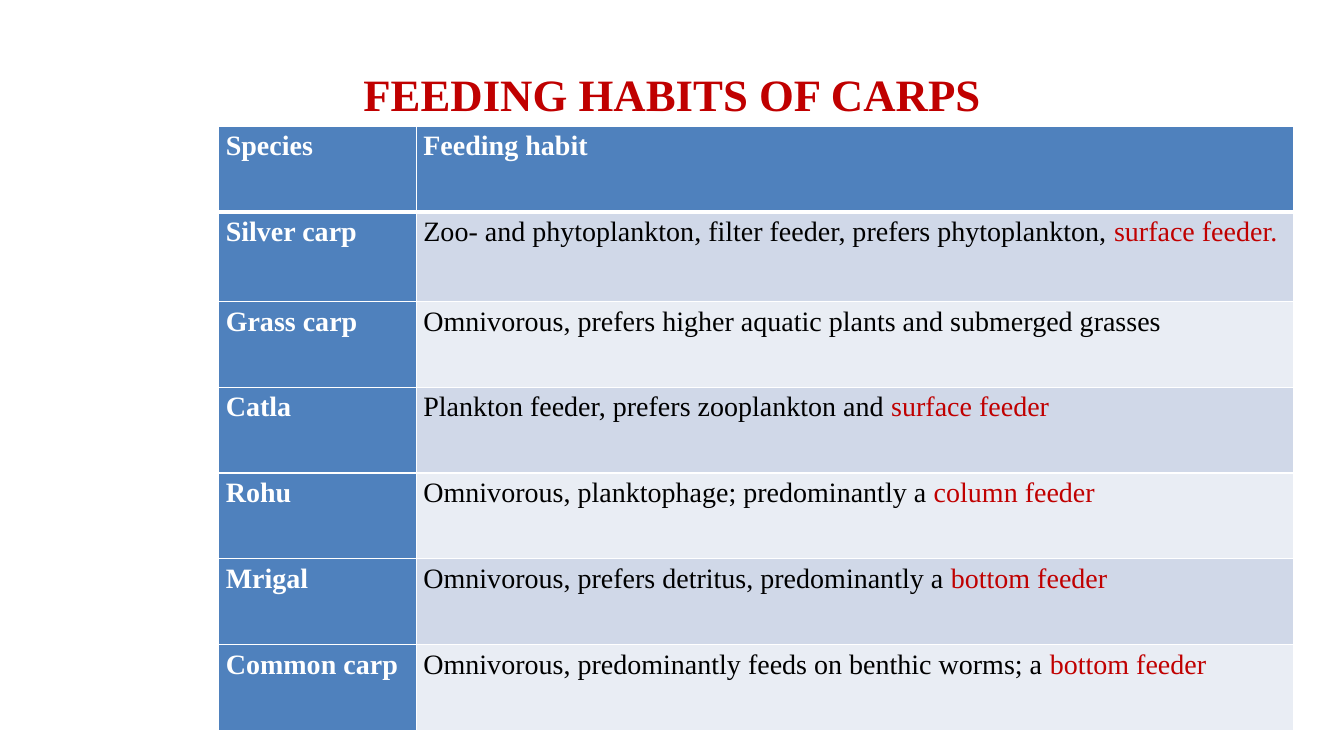
import pptx
import pptx.dml.color
import pptx.enum.text
import pptx.oxml.ns
import pptx.util
from lxml import etree
from pptx.util import Cm

FONT = "Times New Roman"
COLORS = {
    "accent": "C00000",
    "header": "4F81BD",
    "band_dark": "D0D8E8",
    "band_light": "E9EDF4",
    "white": "FFFFFF",
    "black": "000000",
}
HABITS = [
    ("Silver carp", "Zoo- and phytoplankton, filter feeder, prefers phytoplankton, ", "surface feeder."),
    ("Grass carp", "Omnivorous, prefers higher aquatic plants and submerged grasses", ""),
    ("Catla", "Plankton feeder, prefers zooplankton and ", "surface feeder"),
    ("Rohu", "Omnivorous, planktophage; predominantly a ", "column feeder"),
    ("Mrigal", "Omnivorous, prefers detritus, predominantly a ", "bottom feeder"),
    ("Common carp", "Omnivorous, predominantly feeds on benthic worms; a ", "bottom feeder"),
]


def rgb(color):
    return pptx.dml.color.RGBColor.from_string(COLORS[color])


def style_run(run, size, color, bold):
    run.font.name = FONT
    run.font.size = pptx.util.Pt(size)
    run.font.bold = bold
    run.font.color.rgb = rgb(color)


def add_title(slide, wording):
    title = slide.shapes.title
    title.left, title.top, title.width, title.height = Cm(1.7), Cm(0.76), Cm(30.48), Cm(3.18)
    title.text_frame.text = wording
    title.text_frame.vertical_anchor = pptx.enum.text.MSO_ANCHOR.MIDDLE
    heading = title.text_frame.paragraphs[0]
    heading.alignment = pptx.enum.text.PP_ALIGN.CENTER
    style_run(heading.runs[0], 32, "accent", True)


def set_borders(cell, widths):
    properties = cell._tc.get_or_add_tcPr()
    for side, width in widths.items():
        line = etree.SubElement(properties, pptx.oxml.ns.qn(f"a:ln{side}"), w=str(pptx.util.Pt(width)))
        fill = etree.SubElement(line, pptx.oxml.ns.qn("a:solidFill"))
        etree.SubElement(fill, pptx.oxml.ns.qn("a:srgbClr"), val=COLORS["white"])


def fill_cell(cell, wording, color, bold, background, highlight="", top=1, bottom=1):
    set_borders(cell, {"L": 1, "R": 1, "T": top, "B": bottom})
    cell.fill.solid()
    cell.fill.fore_color.rgb = rgb(background)
    cell.margin_left = cell.margin_right = Cm(0.18)
    cell.margin_top = cell.margin_bottom = 0
    paragraph = cell.text_frame.paragraphs[0]
    paragraph.text = wording
    paragraph.alignment = pptx.enum.text.PP_ALIGN.JUSTIFY
    paragraph.line_spacing = 1.15
    paragraph.space_after = pptx.util.Pt(10)
    style_run(paragraph.runs[0], 20, color, bold)
    if highlight:
        feeder = paragraph.add_run()
        feeder.text = highlight
        style_run(feeder, 20, "accent", bold)


def add_habits_table(slide):
    frame = slide.shapes.add_table(len(HABITS) + 1, 2, Cm(5.51), Cm(3.18), Cm(27.1), Cm(15.24))
    table = frame.table
    table.first_col = True
    for column, width in zip(table.columns, (4.98, 22.12)):
        column.width = Cm(width)
    for row in table.rows:
        row.height = Cm(2.16)
    table.rows[1].height = Cm(2.26)
    for column, heading in enumerate(("Species", "Feeding habit")):
        fill_cell(table.cell(0, column), heading, "white", True, "header", bottom=3)
    for row, (species, habit, feeder) in enumerate(HABITS, start=1):
        top = 3 if row == 1 else 1
        band = "band_dark" if row % 2 else "band_light"
        fill_cell(table.cell(row, 0), species, "white", True, "header", top=top)
        fill_cell(table.cell(row, 1), habit, "black", False, band, feeder, top=top)


def main():
    deck = pptx.Presentation()
    deck.slide_width, deck.slide_height = Cm(33.87), Cm(19.05)
    slide = deck.slides.add_slide(deck.slide_layouts[5])
    add_title(slide, "FEEDING HABITS OF CARPS")
    add_habits_table(slide)
    deck.save("out.pptx")


if __name__ == "__main__":
    main()
